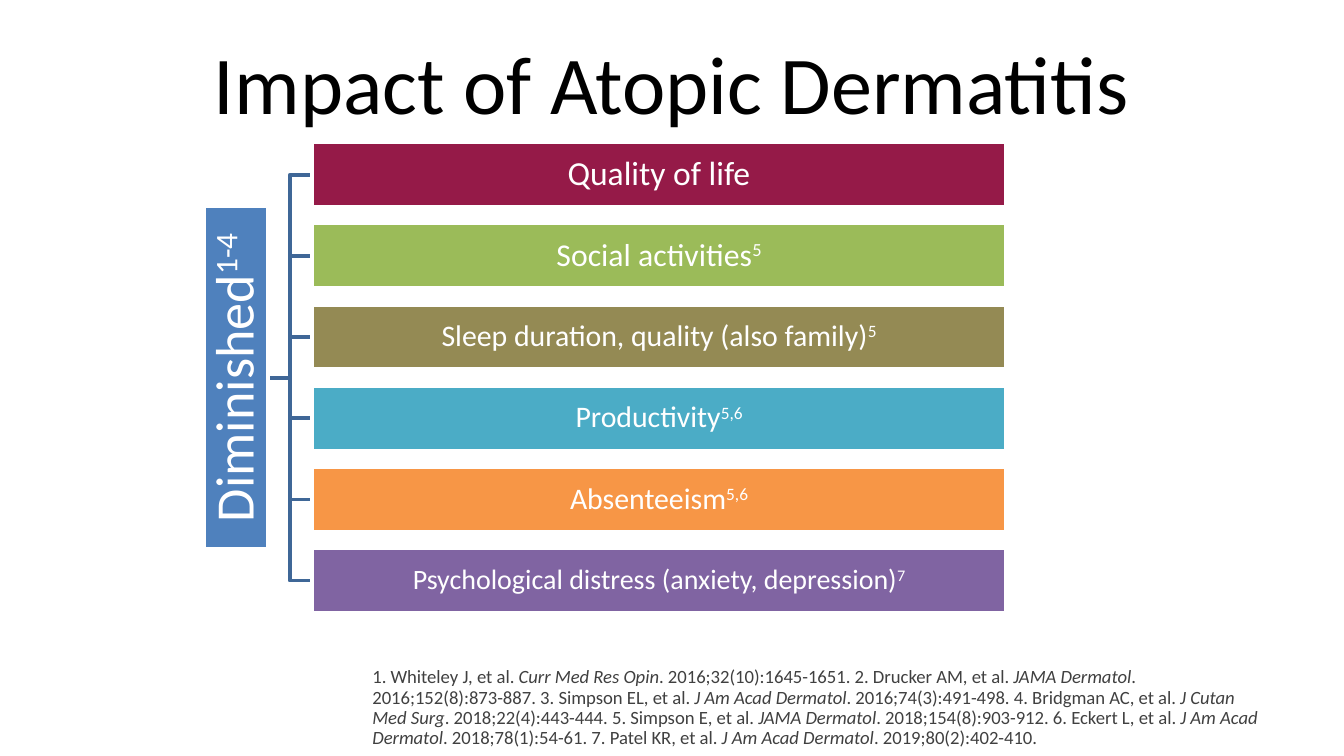
from pptx import Presentation
from pptx.dml.color import RGBColor
from pptx.enum.shapes import MSO_SHAPE as SHAPE
from pptx.enum.text import MSO_ANCHOR as ANCHOR, PP_ALIGN as ALIGN
from pptx.util import Pt

TITLE = "Impact of Atopic Dermatitis"
LABEL = ["Diminished", "1-4"]
BARS = [
    (["Quality of life"], 18, "951A48"),
    (["Social activities", "5"], 17, "9BBB59"),
    (["Sleep duration, quality (also family)", "5"], 16, "948A54"),
    (["Productivity", "5,6"], 16, "4BACC6"),
    (["Absenteeism", "5,6"], 16, "F79646"),
    (["Psychological distress (anxiety, depression)", "7"], 15, "8064A2"),
]
REFERENCES = [
    "1. Whiteley J, et al. ", "Curr Med Res Opin",
    ". 2016;32(10):1645-1651. 2. Drucker AM, et al. ", "JAMA Dermatol",
    ". 2016;152(8):873-887. 3. Simpson EL, et al. ", "J Am Acad Dermatol",
    ". 2016;74(3):491-498. 4. Bridgman AC, et al. ", "J Cutan Med Surg",
    ". 2018;22(4):443-444. 5. Simpson E, et al. ", "JAMA Dermatol",
    ". 2018;154(8):903-912. 6. Eckert L, et al. ", "J Am Acad Dermatol",
    ". 2018;78(1):54-61. 7. Patel KR, et al. ", "J Am Acad Dermatol",
    ". 2019;80(2):402-410.",
]

BAR_X, BAR_Y, BAR_W, BAR_H, PITCH = 167, 76.3, 372.2, 34.6, 43.5
LABEL_LEN, LABEL_RIGHT = 183.6, 143.7
MIDDLE_Y = BAR_Y + (PITCH * (len(BARS) - 1) + BAR_H) / 2


def rgb(color):
    return RGBColor.from_string(color)


def write(sp, segments, size, color="FFFFFF", align=ALIGN.CENTER,
          anchor=ANCHOR.MIDDLE, inset=None, spacing=0.9, odd="superscript"):
    tf = sp.text_frame
    tf.word_wrap = True
    tf.vertical_anchor = anchor
    if inset is not None:
        tf.margin_left = tf.margin_right = Pt(inset)
        tf.margin_top = tf.margin_bottom = Pt(inset)
    p = tf.paragraphs[0]
    p.alignment = align
    p.line_spacing = spacing
    for i, text in enumerate(segments):
        r = p.add_run()
        r.text = text
        r.font.name = "Calibri"
        r.font.size = Pt(size)
        r.font.color.rgb = rgb(color)
        if i % 2 and odd == "italic":
            r.font.italic = True
        elif i % 2:
            r._r.get_or_add_rPr().set("baseline", "30000")


def add_text(s, x, y, w, h, segments, size, **fmt):
    write(s.shapes.add_textbox(Pt(x), Pt(y), Pt(w), Pt(h)), segments, size, **fmt)


def add_box(s, x, y, w, h, fill, segments, size, **fmt):
    sp = s.shapes.add_shape(SHAPE.RECTANGLE, Pt(x), Pt(y), Pt(w), Pt(h))
    sp.shadow.inherit = False
    sp.fill.solid()
    sp.fill.fore_color.rgb = rgb(fill)
    sp.line.color.rgb = rgb("FFFFFF")
    sp.line.width = Pt(2)
    write(sp, segments, size, **fmt)
    return sp


def add_branch(s, y):
    mid = (LABEL_RIGHT + BAR_X) / 2
    points = [(mid, MIDDLE_Y), (mid, y), (BAR_X, y)]
    builder = s.shapes.build_freeform(Pt(LABEL_RIGHT), Pt(MIDDLE_Y))
    builder.add_line_segments([(Pt(px), Pt(py)) for px, py in points], close=False)
    sp = builder.convert_to_shape()
    sp.shadow.inherit = False
    sp.fill.background()
    sp.line.color.rgb = rgb("3F6797")
    sp.line.width = Pt(2)


prs = Presentation()
prs.slide_width, prs.slide_height = Pt(720), Pt(405)
s = prs.slides.add_slide(prs.slide_layouts[6])

add_text(s, 36, 10, 648, 67.7, [TITLE], 44, color="000000", spacing=1.0)

tops = [BAR_Y + i * PITCH for i in range(len(BARS))]
for top in reversed(tops):
    add_branch(s, top + BAR_H / 2)

label = add_box(s, LABEL_RIGHT - (BAR_H + LABEL_LEN) / 2, MIDDLE_Y - BAR_H / 2,
                LABEL_LEN, BAR_H, "4F81BD", LABEL, 29, inset=1.4)
label.rotation = 270

for top, (segments, size, fill) in zip(tops, BARS):
    add_box(s, BAR_X, top, BAR_W, BAR_H, fill, segments, size, inset=0.8)

add_text(s, 192.4, 354.2, 491.6, 46.8, REFERENCES, 10, color="404040",
         align=ALIGN.LEFT, anchor=ANCHOR.TOP, odd="italic")

prs.save("out.pptx")
